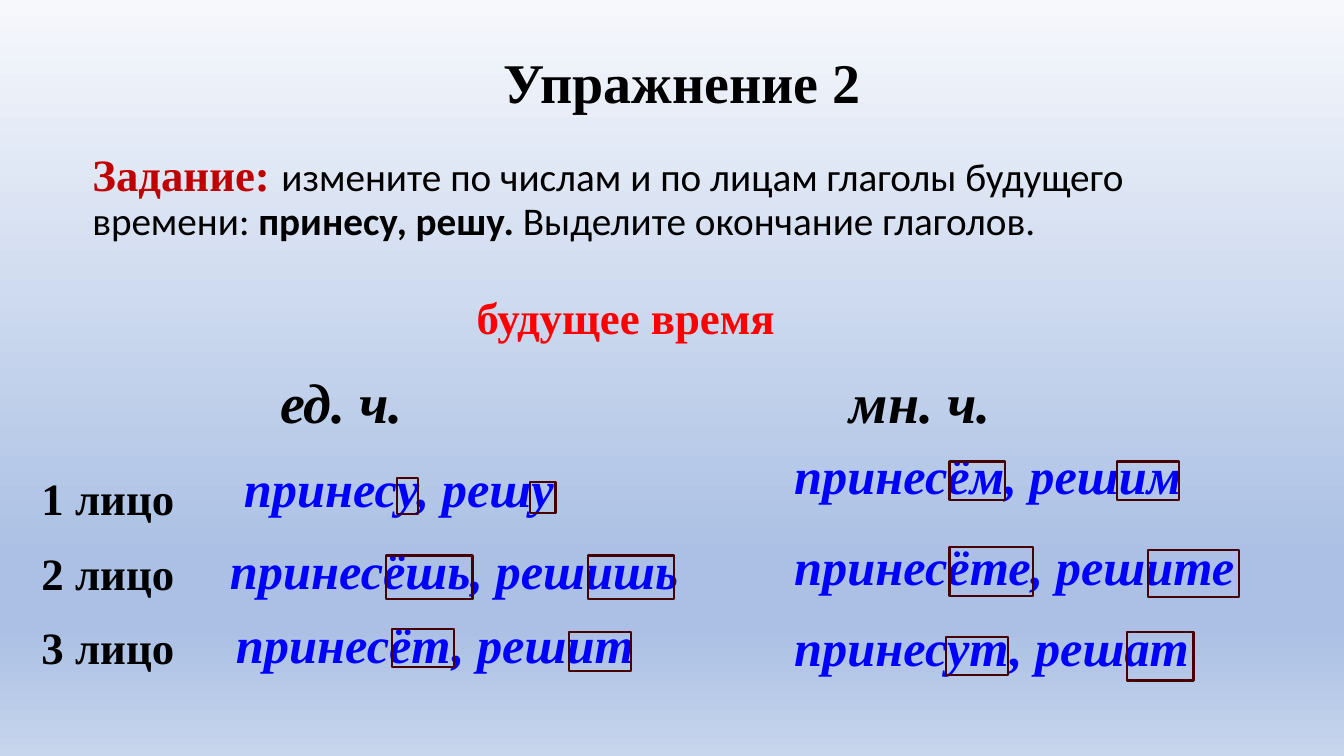
from pptx import Presentation
from pptx.dml.color import RGBColor
from pptx.enum.shapes import MSO_SHAPE
from pptx.enum.text import MSO_ANCHOR, PP_ALIGN
from pptx.oxml import parse_xml
from pptx.oxml.ns import nsdecls, qn
from pptx.util import Cm, Pt

BLACK = RGBColor(0x00, 0x00, 0x00)
DARK_RED = RGBColor(0xC0, 0x00, 0x00)
RED = RGBColor(0xFF, 0x00, 0x00)
BLUE = RGBColor(0x00, 0x00, 0xFF)
MAROON = RGBColor(0x46, 0x00, 0x00)
PALE = RGBColor(0xF6, 0xF8, 0xFC)
MID_BLUE = RGBColor(0xAB, 0xC0, 0xE4)
LIGHT_BLUE = RGBColor(0xC7, 0xD5, 0xED)
BACKGROUND_STOPS = [(0, PALE), (74, MID_BLUE), (83, MID_BLUE), (100, LIGHT_BLUE)]

SERIF = "Times New Roman"
SANS = "Calibri"

# Each verb pair: left, top, width, text, then the frames around its endings
VERB_FORMS = [
    (5.89, 11.48, 29.21, "принесу, решу",
     [(10.01, 12.04, 0.53, 0.91), (13.36, 12.14, 0.64, 0.79)]),
    (5.54, 13.54, 17.22, "принесёшь, решишь",
     [(9.73, 14, 2.18, 1.09), (14.81, 14, 2.18, 1.09)]),
    (5.69, 15.39, 11.15, "принесёт, решит",
     [(9.88, 15.85, 1.57, 0.97), (14.33, 15.93, 1.57, 0.97)]),
    (19.76, 11.15, 11.15, "принесём, решим",
     [(23.93, 11.63, 1.4, 0.97), (28.14, 11.63, 1.57, 0.97)]),
    (19.76, 13.44, 14.91, "принесёте, решите",
     [(23.93, 13.79, 2.11, 1.24), (28.93, 13.87, 2.29, 1.17)]),
    (19.76, 15.49, 11.15, "принесут, решат",
     [(23.83, 16.05, 1.57, 0.97), (28.4, 15.93, 1.68, 1.22)]),
]


def set_background(slide):
    fill = slide.background.fill
    fill.gradient()
    fill.gradient_angle = 270
    stops = slide.element.find(".//" + qn("a:gsLst"))
    stops.clear()
    for position, color in BACKGROUND_STOPS:
        stops.append(parse_xml(
            f'<a:gs {nsdecls("a")} pos="{position * 1000}">'
            f'<a:srgbClr val="{color}"/></a:gs>'))


def add_run(paragraph, text, size, color, bold=True, italic=False, font=SERIF):
    run = paragraph.add_run()
    run.text = text
    run.font.name = font
    run.font.size = Pt(size)
    run.font.bold = bold
    run.font.italic = italic
    run.font.color.rgb = color


def add_task(slide):
    box = slide.shapes.add_textbox(Cm(2.08), Cm(3.73), Cm(29.49), Cm(4.72))
    box.text_frame.word_wrap = True
    paragraph = box.text_frame.paragraphs[0]
    paragraph.line_spacing = 0.9
    add_run(paragraph, "Задание: ", 32, DARK_RED)
    for text, bold in [
        ("измените по числам и по лицам глаголы будущего времени: ", False),
        ("принесу, решу. ", True),
        ("Выделите окончание глаголов.", False),
    ]:
        add_run(paragraph, text, 28, BLACK, bold, font=SANS)


def clear_cell(cell):
    properties = cell._tc.get_or_add_tcPr()
    for side in ("lnL", "lnR", "lnT", "lnB"):
        properties.append(parse_xml(
            f'<a:{side} {nsdecls("a")}><a:noFill/></a:{side}>'))
    cell.fill.background()
    cell.vertical_anchor = MSO_ANCHOR.MIDDLE


def add_tab_stop(paragraph, position):
    paragraph._p.get_or_add_pPr().append(parse_xml(
        f'<a:tabLst {nsdecls("a")}><a:tab pos="{Cm(position)}" algn="l"/></a:tabLst>'))


def add_plain_table(slide, left, top, width, height, lines, size, color,
                    italic=False, alignment=None, line_spacing=None,
                    tab_stop=None, row_height=0):
    """Add a one-cell table whose row grows to fit its lines of text."""
    graphic_frame = slide.shapes.add_table(
        1, 1, Cm(left), Cm(top), Cm(width), Cm(height))
    table = graphic_frame.table
    table.first_row = False
    table.horz_banding = False
    table.rows[0].height = Cm(row_height)
    graphic_frame.height = Cm(height)
    cell = table.cell(0, 0)
    clear_cell(cell)
    frame = cell.text_frame
    for number, line in enumerate(lines):
        paragraph = frame.add_paragraph() if number else frame.paragraphs[0]
        if alignment is not None:
            paragraph.alignment = alignment
        if line_spacing:
            paragraph.line_spacing = line_spacing
        if tab_stop:
            add_tab_stop(paragraph, tab_stop)
        add_run(paragraph, line, size, color, italic=italic)


def add_ending_frame(slide, left, top, width, height):
    shape = slide.shapes.add_shape(
        MSO_SHAPE.RECTANGLE, Cm(left), Cm(top), Cm(width), Cm(height))
    shape.shadow.inherit = False
    shape.fill.background()
    shape.line.color.rgb = MAROON
    shape.line.width = Pt(1.5)


def main():
    presentation = Presentation()
    presentation.slide_width, presentation.slide_height = Cm(33.87), Cm(19.05)
    slide = presentation.slides.add_slide(presentation.slide_layouts[6])
    set_background(slide)

    # Heading table and task
    add_plain_table(slide, 2.59, 1.22, 29.21, 1.96, ["Упражнение 2"], 40, BLACK,
                    alignment=PP_ALIGN.CENTER)
    add_task(slide)

    # Tense, number and person headings
    add_plain_table(slide, 11.76, 7.24, 29.21, 1.6, ["будущее время"], 32, RED)
    add_plain_table(slide, 6.81, 8.92, 23.16, 2.54, ["ед. ч.\tмн. ч."], 40, BLACK,
                    italic=True, tab_stop=14.35, row_height=2.54)
    add_plain_table(slide, 0.79, 11, 6.2, 6.12, ["1 лицо", "2 лицо", "3 лицо"],
                    32, BLACK, line_spacing=1.5)

    # Verb forms, then frames on top of them
    for left, top, width, text, endings in VERB_FORMS:
        add_plain_table(slide, left, top, width, 1.78, [text], 36, BLUE, italic=True)
    for left, top, width, text, endings in VERB_FORMS:
        for ending in endings:
            add_ending_frame(slide, *ending)

    presentation.save("out.pptx")


if __name__ == "__main__":
    main()
